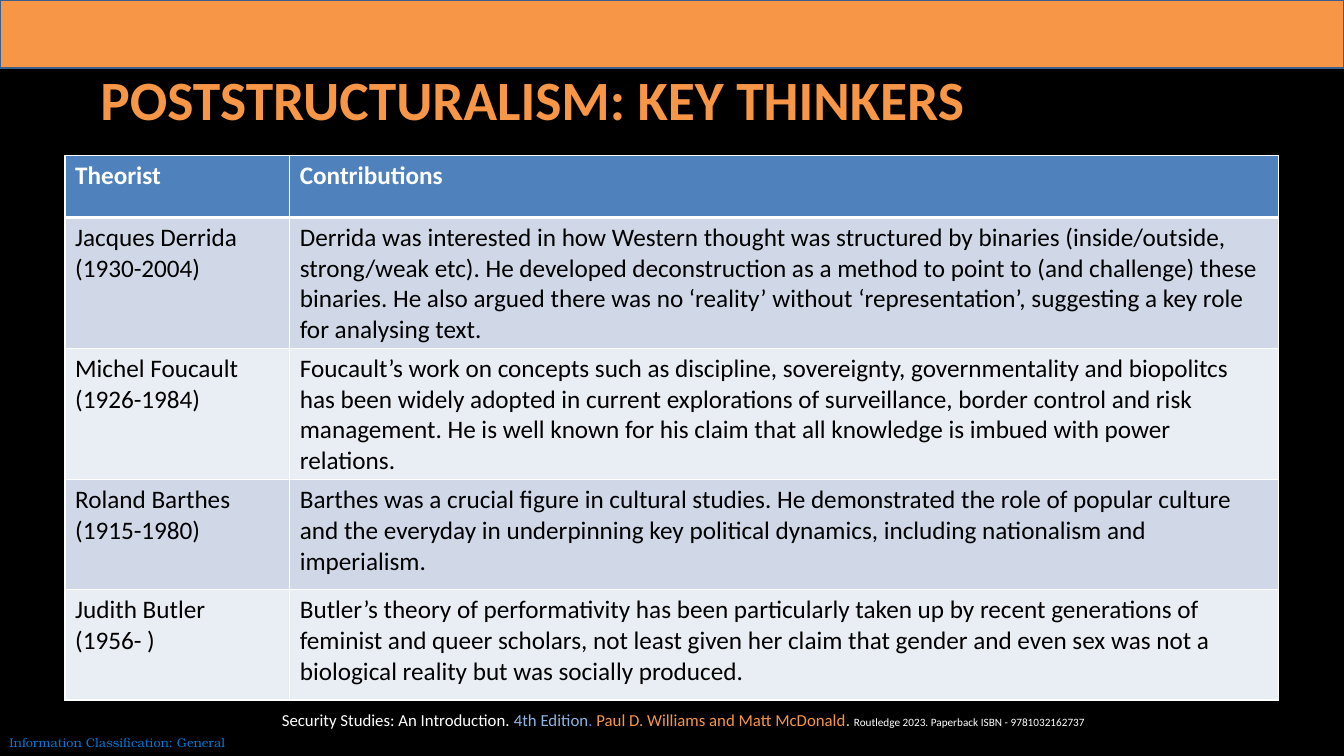
from typing import NamedTuple

from lxml.etree import SubElement as Sub
from pptx import Presentation
from pptx.dml.color import RGBColor
from pptx.enum.shapes import MSO_SHAPE as Shape
from pptx.enum.text import MSO_ANCHOR as Anchor, PP_ALIGN as Align
from pptx.oxml.ns import qn
from pptx.util import Emu, Pt

ORANGE, WHITE, BLACK = "F79646", "FFFFFF", "000000"
BLUE, BANDS = "4F81BD", ("E9EDF4", "D0D8E8")
COLS = (214, 942)
ROWS = (59, 124, 124, 105, 105)


class Box(NamedTuple):
    left: int
    top: int
    width: int
    height: int


class Span(NamedTuple):
    text: str
    color: str
    size: float = 12


class Note(NamedTuple):
    box: Box
    font: str
    align: Align
    anchor: Anchor
    inset: int
    spans: tuple[Span, ...]


class Entry(NamedTuple):
    name: str
    work: str


NOTES = (
    Note(Box(6, 676, 1290, 32), "Calibri", Align.CENTER, Anchor.TOP, 0, (
        Span("Security Studies: An Introduction. ", WHITE),
        Span("4th Edition", "8EB4E3"),
        Span(". ", "558ED5"),
        Span("Paul D. Williams and Matt McDonald", ORANGE),
        Span(". ", "C3D69B"),
        Span("Routledge 2023. Paperback ISBN - 9781032162737", WHITE, 8),
    )),
    Note(Box(0, 695, 224, 25), "TeX Gyre Bonum", Align.LEFT, Anchor.MIDDLE, 9, (
        Span("Information Classification: General", "0078D7", 9),
    )),
)

ENTRIES = (
    Entry("Theorist", "Contributions"),
    Entry("Jacques Derrida (1930-2004)",
          "Derrida was interested in how Western thought was structured by binaries "
          "(inside/outside, strong/weak etc). He developed deconstruction as a method to "
          "point to (and challenge) these binaries. He also argued there was no ‘reality’ "
          "without ‘representation’, suggesting a key role for analysing text."),
    Entry("Michel Foucault (1926-1984)",
          "Foucault’s work on concepts such as discipline, sovereignty, governmentality "
          "and biopolitcs has been widely adopted in current explorations of surveillance, "
          "border control and risk management. He is well known for his claim that all "
          "knowledge is imbued with power relations."),
    Entry("Roland Barthes (1915-1980)",
          "Barthes was a crucial figure in cultural studies. He demonstrated the role of "
          "popular culture and the everyday in underpinning key political dynamics, "
          "including nationalism and imperialism."),
    Entry("Judith Butler\v(1956- )",
          "Butler’s theory of performativity has been particularly taken up by recent "
          "generations of feminist and queer scholars, not least given her claim that "
          "gender and even sex was not a biological reality but was socially produced."),
)


def px(count: int) -> Emu:
    return Emu(count * 9525)


def place(box: Box) -> tuple[Emu, ...]:
    return tuple(px(side) for side in box)


def rgb(code: str) -> RGBColor:
    return RGBColor.from_string(code)


def style(font, size: float, color: str, bold: bool = False, name: str = "Calibri") -> None:
    font.name, font.size, font.bold = name, Pt(size), bold
    font.color.rgb = rgb(color)


def add_bar(slide) -> None:
    bar = slide.shapes.add_shape(Shape.RECTANGLE, *place(Box(0, 0, 1280, 65)))
    bar.shadow.inherit = False
    bar.fill.solid()
    bar.fill.fore_color.rgb = rgb(ORANGE)
    bar.line.color.rgb = rgb("3A5F8C")
    bar.line.width = Pt(1.5)


def add_title(slide) -> None:
    title = slide.shapes.title
    title.left, title.top, title.width, title.height = place(Box(86, 65, 1106, 66))
    frame = title.text_frame
    frame.text = "POSTSTRUCTURALISM: KEY THINKERS"
    frame.vertical_anchor = Anchor.MIDDLE
    para = frame.paragraphs[0]
    para.alignment, para.line_spacing = Align.LEFT, 0.9
    style(para.font, 39.6, ORANGE, True)


def add_note(slide, note: Note) -> None:
    frame = slide.shapes.add_textbox(*place(note.box)).text_frame
    frame.word_wrap = True
    frame.vertical_anchor = note.anchor
    frame.margin_left = px(note.inset)
    frame.margin_right = frame.margin_top = frame.margin_bottom = 0
    para = frame.paragraphs[0]
    para.alignment = note.align
    for span in note.spans:
        run = para.add_run()
        run.text = span.text
        style(run.font, span.size, span.color, name=note.font)


def edge(cell, row: int) -> None:
    """Draw white cell borders, thick between the header and the body."""
    props = cell._tc.get_or_add_tcPr()
    widths = {"L": 1, "R": 1, "T": 3 if row == 1 else 1, "B": 3 if row == 0 else 1}
    for side, width in widths.items():
        line = Sub(props, qn(f"a:ln{side}"), w=str(Pt(width)))
        Sub(Sub(line, qn("a:solidFill")), qn("a:srgbClr"), val=WHITE)


def add_grid(slide) -> None:
    box = Box(62, 148, sum(COLS), sum(ROWS))
    grid = slide.shapes.add_table(len(ROWS), len(COLS), *place(box)).table
    for col, width in zip(grid.columns, COLS):
        col.width = px(width)
    for row, (entry, height) in enumerate(zip(ENTRIES, ROWS)):
        grid.rows[row].height = px(height)
        head = row == 0
        for col, text in enumerate(entry):
            cell = grid.cell(row, col)
            cell.text = text
            edge(cell, row)
            cell.fill.solid()
            cell.fill.fore_color.rgb = rgb(BLUE if head else BANDS[row % 2])
            style(cell.text_frame.paragraphs[0].font, 18, WHITE if head else BLACK, head)


def main() -> None:
    deck = Presentation()
    deck.slide_width, deck.slide_height = px(1280), px(720)
    slide = deck.slides.add_slide(deck.slide_layouts.get_by_name("Title Only"))
    slide.background.fill.solid()
    slide.background.fill.fore_color.rgb = rgb(BLACK)
    add_bar(slide)
    for note in NOTES:
        add_note(slide, note)
    add_title(slide)
    add_grid(slide)
    deck.save("out.pptx")


if __name__ == "__main__":
    main()
